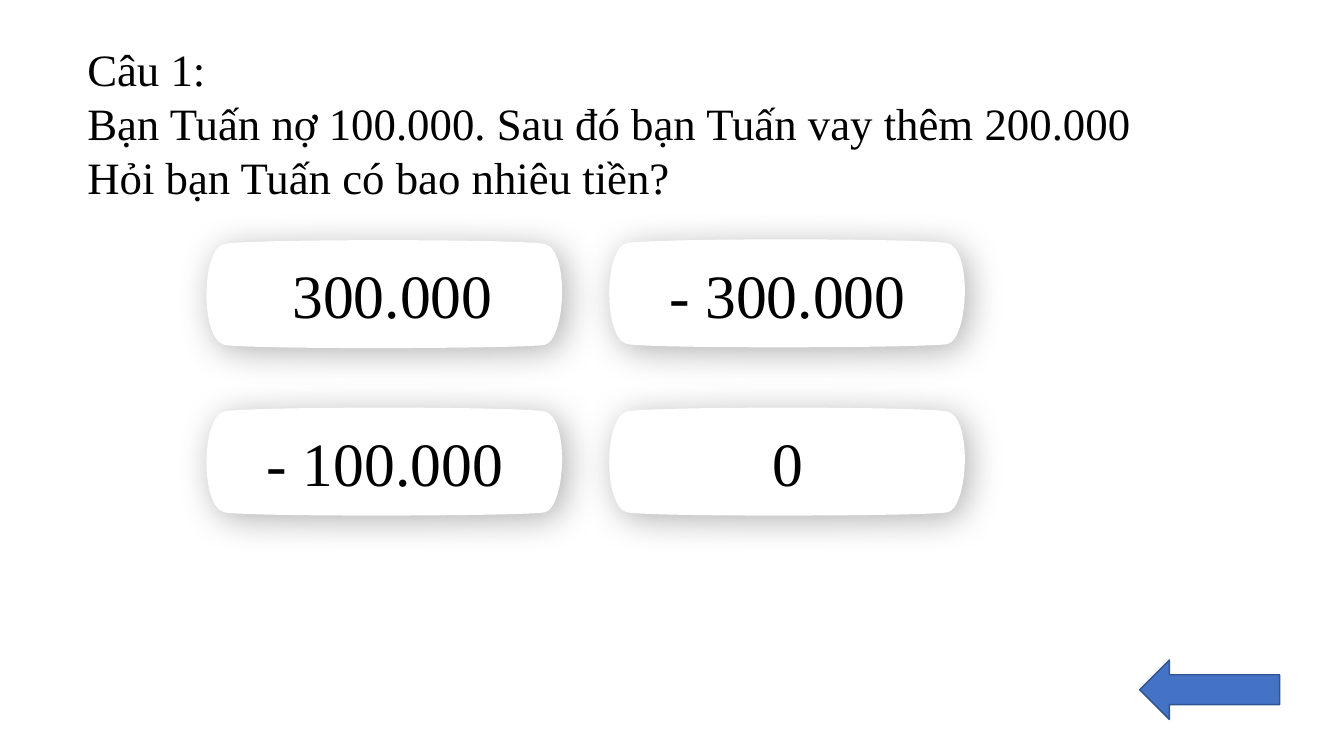
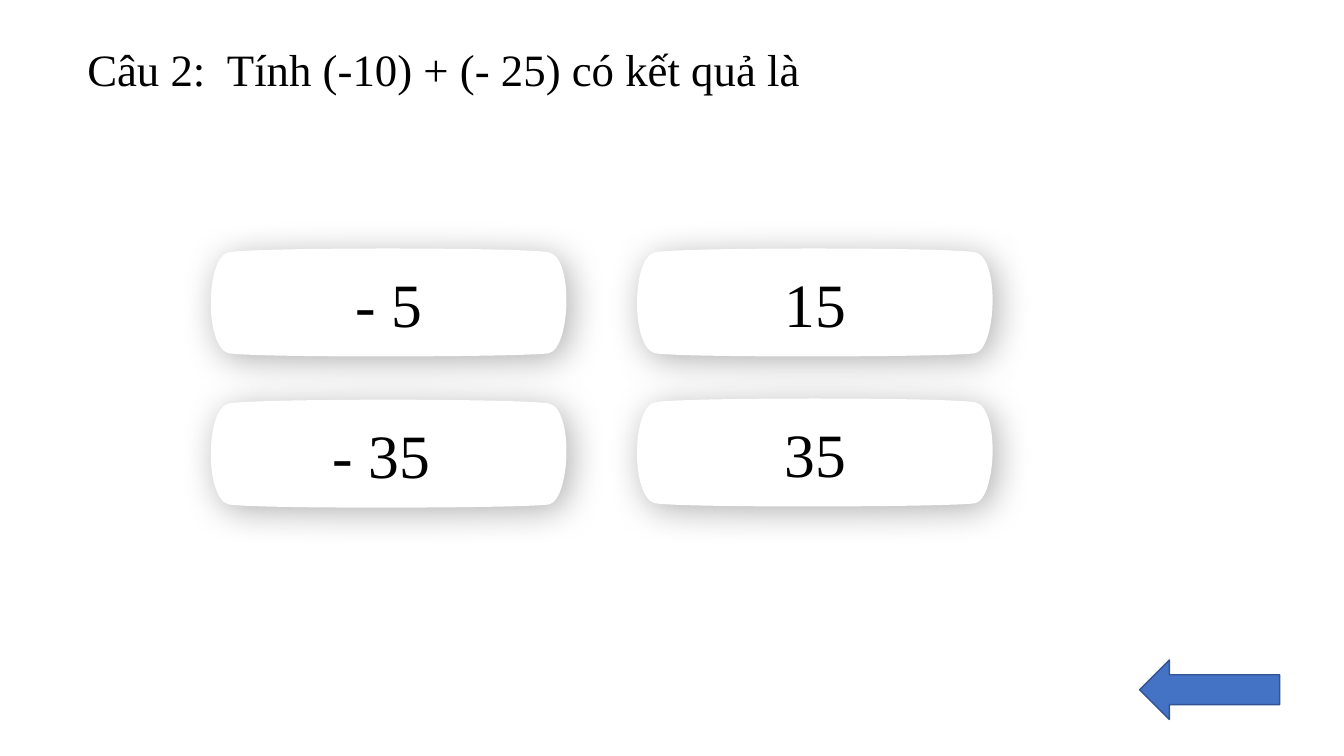
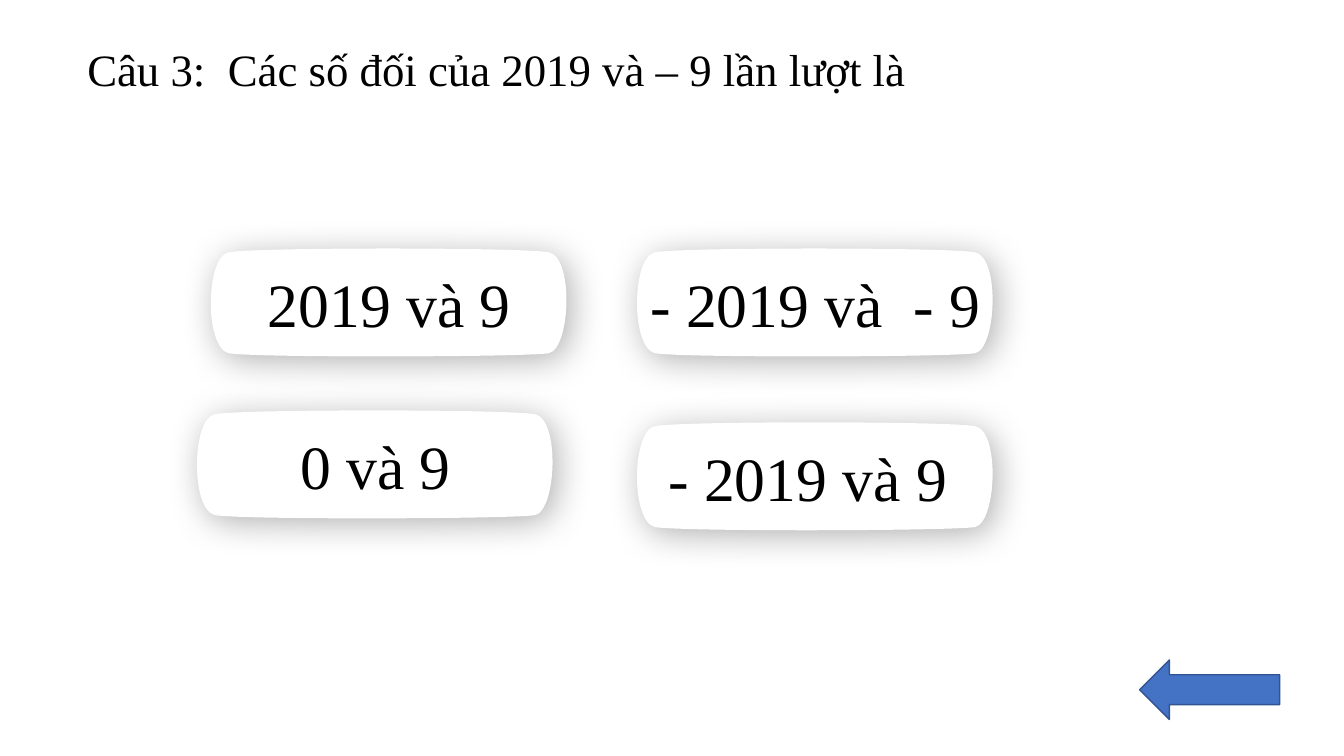
from lxml.etree import SubElement as Sub
from pptx import Presentation
from pptx.dml.color import RGBColor as RGB
from pptx.enum.shapes import MSO_SHAPE as Kind
from pptx.enum.text import MSO_ANCHOR as Anchor, MSO_AUTO_SIZE as Auto, PP_ALIGN as Align
from pptx.oxml.ns import qn
from pptx.util import Cm, Pt

FONT = "Times New Roman"
INK, WHITE, BLUE, NAVY = "000000", "FFFFFF", "4472C4", "325491"
ASK = (1.95, 0.93, 30.28)
BACK = (28.72, 16.63, 3.53, 1.5)
START = (8.69, 0.13)
BENDS = [
    (9.32, 0.28), (9.22, 2.54), (8.69, 2.67),
    (8.18, 2.77), (1.22, 2.79), (0.61, 2.67),
    (0, 2.51), (0.03, 0.25), (0.61, 0.13),
    (1.19, 0), (8.05, 0), START,
]

QUIZ = [
    (["Câu 1:",
      "Bạn Tuấn nợ 100.000. Sau đó bạn Tuấn vay thêm 200.000",
      "Hỏi bạn Tuấn có bao nhiêu tiền?"],
     [("- 300.000", 15.19, 6), (" 300.000", 5.04, 6.02),
      ("- 100.000", 5.04, 10.24), ("0", 15.19, 10.24)]),
    (["Câu 2:  Tính (-10) + (- 25) có kết quả là"],
     [("- 35 ", 5.15, 10.04), ("- 5", 5.15, 6.23),
      ("15", 15.89, 6.23), ("35", 15.89, 10.01)]),
    (["Câu 3:  Các số đối của 2019 và – 9 lần lượt là"],
     [("- 2019 và 9 ", 15.89, 10.61), ("2019 và 9", 5.15, 6.23),
      ("- 2019 và  - 9", 15.89, 6.23), ("0 và 9", 4.8, 10.31)]),
]


def paint(spot, tone):
    """Give a fill or line fill a solid colour."""
    spot.solid()
    spot.fore_color.rgb = RGB.from_string(tone)


def write(frame, lines, size=32, tone=INK, align=Align.LEFT, anchor=Anchor.TOP):
    """Put lines of text into a frame, one paragraph each."""
    frame.word_wrap = True
    frame.vertical_anchor = anchor
    for i, line in enumerate(lines):
        para = frame.paragraphs[0] if i == 0 else frame.add_paragraph()
        para.alignment = align
        run = para.add_run()
        run.text = line
        run.font.name, run.font.size = FONT, Pt(size)
        paint(run.font.fill, tone)


def bend(shape):
    """Turn each three straight segments into one cubic curve."""
    lines = list(shape._element.iter(qn("a:lnTo")))
    for i in range(0, len(lines), 3):
        first, *rest = lines[i:i + 3]
        first.tag = qn("a:cubicBezTo")
        for line in rest:
            first.append(line[0])
            line.getparent().remove(line)


def shade(shape):
    """Add a soft outer shadow."""
    shape.shadow.inherit = False
    glow = Sub(shape._element.spPr.find(qn("a:effectLst")), qn("a:outerShdw"),
               blurRad=str(Pt(25)), dist=str(Pt(5)), dir=str(45 * 60000),
               algn="tl", rotWithShape="0")
    tint = Sub(glow, qn("a:srgbClr"), val=INK)
    Sub(tint, qn("a:alpha"), val="30000")


def card(slide, text, x, y):
    """Draw one answer card with its corner at x, y."""
    first, *rest = [(Cm(x + dx), Cm(y + dy)) for dx, dy in [START, *BENDS]]
    pen = slide.shapes.build_freeform(*first)
    pen.add_line_segments(rest, close=True)
    shape = pen.convert_to_shape()
    bend(shape)
    paint(shape.fill, WHITE)
    shape.line.fill.background()
    shade(shape)
    write(shape.text_frame, [text], size=44, align=Align.CENTER, anchor=Anchor.MIDDLE)


def ask(slide, lines, box):
    """Write the question in a box of left, top and width."""
    x, y, w = box
    height = 0.25 + 1.37 * len(lines)
    frame = slide.shapes.add_textbox(Cm(x), Cm(y), Cm(w), Cm(height)).text_frame
    write(frame, lines)
    frame.auto_size = Auto.SHAPE_TO_FIT_TEXT


def back(slide, box):
    """Draw the arrow that points back."""
    arrow = slide.shapes.add_shape(Kind.LEFT_ARROW, *map(Cm, box))
    arrow.shadow.inherit = False
    paint(arrow.fill, BLUE)
    paint(arrow.line.fill, NAVY)
    arrow.line.width = Pt(1)


def main():
    """Build the quiz and save it."""
    deck = Presentation()
    deck.slide_width, deck.slide_height = Cm(33.87), Cm(19.05)
    for lines, cards in QUIZ:
        slide = deck.slides.add_slide(deck.slide_layouts[6])
        paint(slide.background.fill, WHITE)
        ask(slide, lines, ASK)
        for text, x, y in cards:
            card(slide, text, x, y)
        back(slide, BACK)
    deck.save("out.pptx")


if __name__ == "__main__":
    main()
